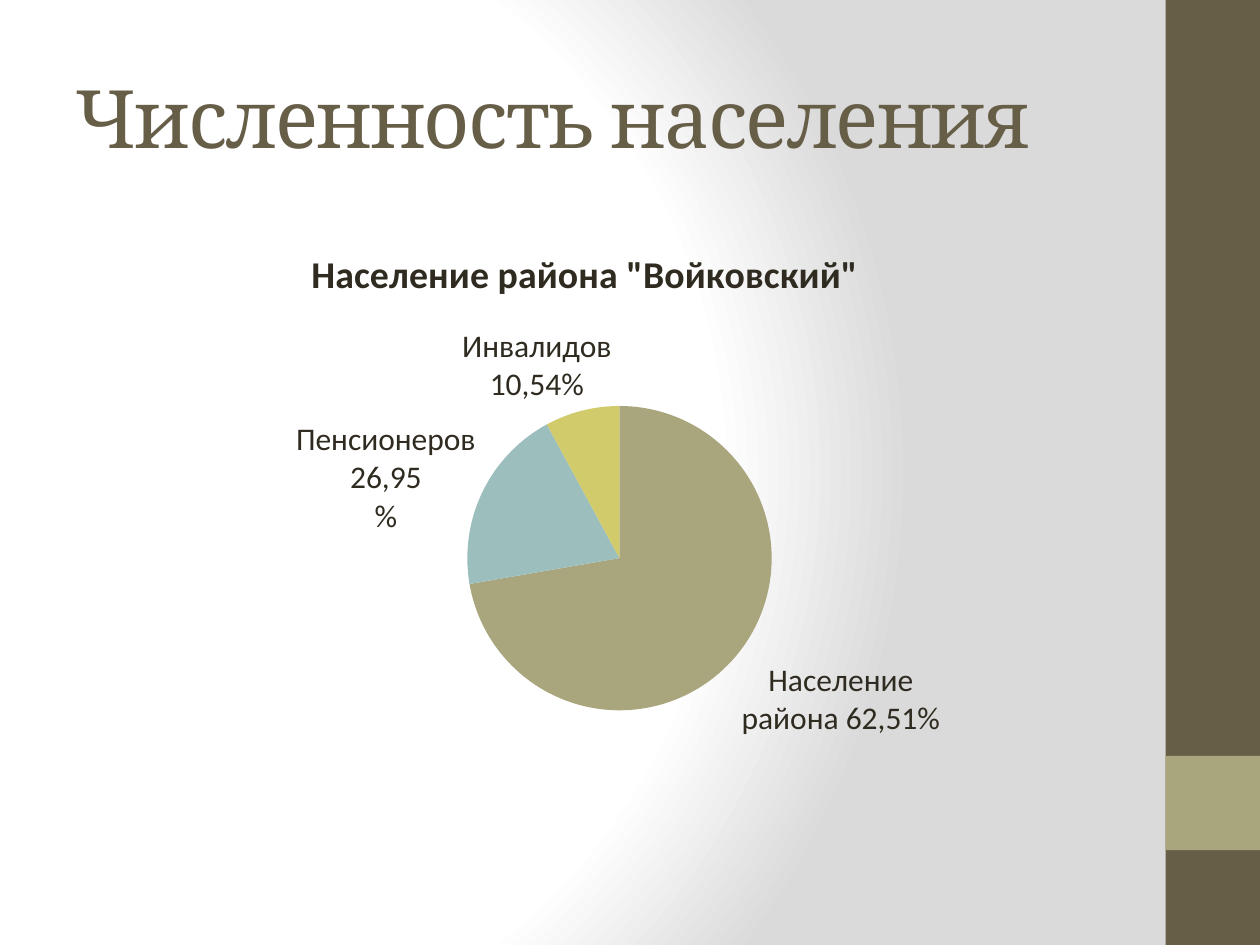
import dataclasses

import lxml.etree
import pptx
import pptx.chart.data
import pptx.dml.color
import pptx.enum.chart
import pptx.enum.shapes
import pptx.enum.text
import pptx.oxml
import pptx.oxml.ns
import pptx.util
from pptx.util import Cm


@dataclasses.dataclass(frozen=True)
class Theme:
    paper: str = "FFFFFF"
    shade: str = "DADADA"
    brown: str = "675E47"
    olive: str = "A9A57C"
    ink: str = "2F2B20"
    slices: tuple = ("A9A57C", "9CBEBD", "D2CB6C")
    heading_font: str = "Cambria"
    body_font: str = "Calibri"
    heading_size: float = 46
    chart_title_size: float = 21.6
    label_size: float = 18


THEME = Theme()
POPULATION_TITLE = 'Население района "Войковский"'
# Category, value, label, label shift as fractions of the chart's box
POPULATION = (
    ("Население района", 73, "Население района 62,51%", None),
    ("Пенсионеров", 20, "Пенсионеров\n26,95\n%", (0, 0.07)),
    ("Инвалидов", 8, "Инвалидов\n10,54%", (0.03, 0)),
)


def rgb(color):
    return pptx.dml.color.RGBColor.from_string(color)


def write_text(frame, text, *, font, size, color, bold=False, align=None, spacing=None):
    """Fill a text frame, one paragraph for each line of text."""
    for number, line in enumerate(text.split("\n")):
        paragraph = frame.add_paragraph() if number else frame.paragraphs[0]
        paragraph.alignment = align
        run = paragraph.add_run()
        run.text = line
        run.font.name, run.font.size, run.font.bold = font, pptx.util.Pt(size), bold
        run.font.color.rgb = rgb(color)
        if spacing is not None:
            run.font._element.set("spc", str(round(spacing * 100)))


def paint_background(slide):
    """Radial gradient centred left of the middle."""
    stops = ((0, THEME.paper), (75, THEME.paper), (100, THEME.shade))
    stop_xml = "".join(
        f'<a:gs pos="{pos * 1000}"><a:srgbClr val="{color}"/></a:gs>' for pos, color in stops
    )
    gradient = pptx.oxml.parse_xml(
        f'<a:gradFill {pptx.oxml.ns.nsdecls("a")} rotWithShape="1"><a:gsLst>{stop_xml}</a:gsLst>'
        '<a:path path="circle">'
        '<a:fillToRect l="20000" t="50000" r="100000" b="50000"/></a:path></a:gradFill>'
    )
    slide.background.fill.solid()
    solid = slide._element.find(".//" + pptx.oxml.ns.qn("p:bgPr"))[0]
    solid.getparent().replace(solid, gradient)


def add_side_band(slide, left, top, width, height):
    """Brown band with an olive square four fifths of the way down."""
    parts = ((top, height, THEME.brown), (top + int(height * 0.8), width, THEME.olive))
    for part_top, part_height, color in parts:
        block = slide.shapes.add_shape(
            pptx.enum.shapes.MSO_SHAPE.RECTANGLE, left, part_top, width, part_height
        )
        block.shadow.inherit = False
        block.fill.solid()
        block.fill.fore_color.rgb = rgb(color)
        block.line.fill.background()


def place_heading(slide, text, left, top, width, height):
    heading = slide.shapes.title
    heading.left, heading.top, heading.width, heading.height = left, top, width, height
    frame = heading.text_frame
    frame.word_wrap = True
    frame.auto_size = pptx.enum.text.MSO_AUTO_SIZE.NONE
    frame.vertical_anchor = pptx.enum.text.MSO_ANCHOR.MIDDLE
    write_text(frame, text, font=THEME.heading_font, size=THEME.heading_size,
               color=THEME.brown, align=pptx.enum.text.PP_ALIGN.LEFT, spacing=-1)


def set_layout(parent, index, **settings):
    """Place a chart part by fractions of the chart's box."""
    qn = pptx.oxml.ns.qn
    for old in parent.findall(qn("c:layout")):
        parent.remove(old)
    layout = lxml.etree.Element(qn("c:layout"))
    manual = lxml.etree.SubElement(layout, qn("c:manualLayout"))
    for name, value in settings.items():
        lxml.etree.SubElement(manual, qn("c:" + name)).set("val", str(value))
    parent.insert(index, layout)


def add_population_pie(slide, left, top, width, height):
    qn = pptx.oxml.ns.qn
    data = pptx.chart.data.CategoryChartData()
    data.categories = [row[0] for row in POPULATION]
    data.add_series(POPULATION_TITLE, [row[1] for row in POPULATION])
    chart = slide.shapes.add_chart(
        pptx.enum.chart.XL_CHART_TYPE.PIE, left, top, width, height, data
    ).chart
    chart.has_legend = False
    chart.font.name, chart.font.size = THEME.body_font, pptx.util.Pt(THEME.label_size)
    chart.font.color.rgb = rgb(THEME.ink)

    # Title and pie position
    from_edge = {"xMode": "edge", "yMode": "edge"}
    chart.has_title = True
    write_text(chart.chart_title.text_frame, POPULATION_TITLE, font=THEME.body_font,
               size=THEME.chart_title_size, color=THEME.ink, bold=True)
    set_layout(chart.chart_title._element, 1, **from_edge, x=0.23, y=0.03)
    plot_area = chart._chartSpace.find(".//" + qn("c:plotArea"))
    set_layout(plot_area, 0, layoutTarget="inner", **from_edge, x=0.38, y=0.28, w=0.3, h=0.46)

    # Slices and their labels
    pie = chart.plots[0]
    pie.vary_by_categories = True
    series = pie.series[0]
    for number, ((_, _, label, shift), color) in enumerate(zip(POPULATION, THEME.slices)):
        piece = series.points[number]
        piece.format.fill.solid()
        piece.format.fill.fore_color.rgb = rgb(color)
        piece.format.line.fill.background()
        write_text(piece.data_label.text_frame, label, font=THEME.body_font,
                   size=THEME.label_size, color=THEME.ink)
        piece.data_label.position = pptx.enum.chart.XL_LABEL_POSITION.OUTSIDE_END
        if shift:
            label_xml = series.data_labels._element.findall(qn("c:dLbl"))[number]
            set_layout(label_xml, 1, x=shift[0], y=shift[1])

    # Shifted labels go without leader lines
    for leader in series.data_labels._element.findall(qn("c:showLeaderLines")):
        leader.set("val", "0")


def main():
    deck = pptx.Presentation()
    deck.slide_width, deck.slide_height = Cm(25.4), Cm(19.05)
    slide = deck.slides.add_slide(deck.slide_layouts[5])
    band_width = Cm(1.9)
    margin, content_width = Cm(1.27), Cm(21.17)
    paint_background(slide)
    add_side_band(slide, deck.slide_width - band_width, 0, band_width, deck.slide_height)
    place_heading(slide, "Численность населения", margin, Cm(0.76), content_width, Cm(3.18))
    add_population_pie(slide, margin, Cm(4.45), content_width, Cm(13.34))
    deck.save("out.pptx")


if __name__ == "__main__":
    main()
